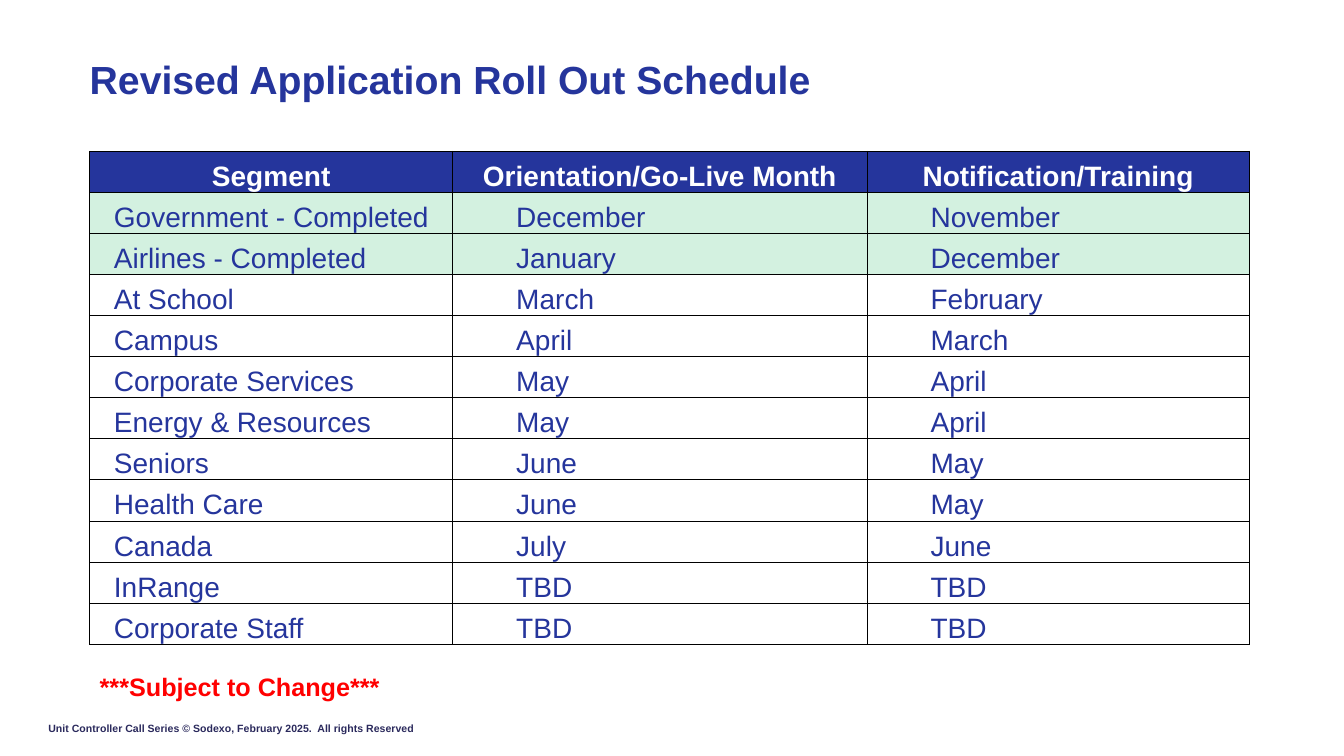
from lxml.etree import SubElement
from pptx import Presentation
from pptx.dml.color import RGBColor
from pptx.enum.text import MSO_ANCHOR as Anchor, PP_ALIGN as Align
from pptx.oxml.ns import qn
from pptx.util import Inches, Pt

BLUE, MINT, BLACK = "25359C", "D3F1E0", "000000"
LEFT, WIDTH = 0.89, 11.5


def add_run(p, text, size, color, bold=False):
    r = p.add_run()
    r.text = text
    r.font.name, r.font.size, r.font.bold = "Arial", Pt(size), bold
    r.font.color.rgb = RGBColor.from_string(color)


def add_borders(cell, color):
    """Draw a thin line on all four sides; call before the cell gets its fill."""
    for side in ("a:lnL", "a:lnR", "a:lnT", "a:lnB"):
        ln = SubElement(cell._tc.get_or_add_tcPr(), qn(side), w=str(Pt(0.5)))
        fill = SubElement(ln, qn("a:solidFill"))
        SubElement(fill, qn("a:srgbClr"), val=color)


prs = Presentation()
prs.slide_width, prs.slide_height = Inches(13.33), Inches(7.5)
s = prs.slides.add_slide(prs.slide_layouts[6])

# Title, note and footer: place, text, size, colour, anchor, side and top insets
texts = [
    ((LEFT, 0.6, WIDTH, 0.42), "Revised Application Roll Out Schedule",
     28, BLUE, Anchor.MIDDLE, 0, 0),
    ((LEFT, 6.61, 4.08, 0.4), "***Subject to Change***",
     18, "FF0000", Anchor.TOP, 0.1, 0.05),
    ((0.48, 7.16, 4.5, 0.13),
     "Unit Controller Call Series © Sodexo, February 2025.  All rights Reserved",
     7.5, "2A295C", Anchor.MIDDLE, 0, 0),
]
for place, text, size, color, anchor, side, top in texts:
    tf = s.shapes.add_textbox(*map(Inches, place)).text_frame
    tf.word_wrap, tf.vertical_anchor = True, anchor
    tf.margin_left = tf.margin_right = Inches(side)
    tf.margin_top = tf.margin_bottom = Inches(top)
    add_run(tf.paragraphs[0], text, size, color, bold=True)
    if size == 28:
        tf.paragraphs[0].line_spacing = 0.9

# Schedule
schedule = [
    ("Segment", "Orientation/Go-Live Month", "Notification/Training"),
    ("Government - Completed", "December", "November"),
    ("Airlines - Completed", "January", "December"),
    ("At School", "March", "February"),
    ("Campus", "April", "March"),
    ("Corporate Services", "May", "April"),
    ("Energy & Resources", "May", "April"),
    ("Seniors", "June", "May"),
    ("Health Care", "June", "May"),
    ("Canada", "July", "June"),
    ("InRange", "TBD", "TBD"),
    ("Corporate Staff", "TBD", "TBD"),
]
col_widths = (3.6, 4.11, 3.79)
indents = (0.24, 0.63, 0.63)

table = s.shapes.add_table(len(schedule), len(col_widths), Inches(LEFT), Inches(1.5),
                           Inches(WIDTH), Inches(4.89)).table
table.horz_banding = table.first_row = False
for col, width in zip(table.columns, col_widths):
    col.width = Inches(width)

for i, row in enumerate(schedule):
    is_header = i == 0
    for j, text in enumerate(row):
        cell = table.cell(i, j)
        cell.vertical_anchor = Anchor.BOTTOM
        cell.margin_top = cell.margin_bottom = cell.margin_right = 0
        cell.margin_left = 0 if is_header else Inches(indents[j])
        add_borders(cell, BLACK)
        if is_header or "Completed" in row[0]:
            cell.fill.solid()
            cell.fill.fore_color.rgb = RGBColor.from_string(BLUE if is_header else MINT)
        else:
            cell.fill.background()
        p = cell.text_frame.paragraphs[0]
        p.alignment = Align.CENTER if is_header else Align.LEFT
        add_run(p, text, 20, "FFFFFF" if is_header else BLUE, bold=is_header)

prs.save("out.pptx")
